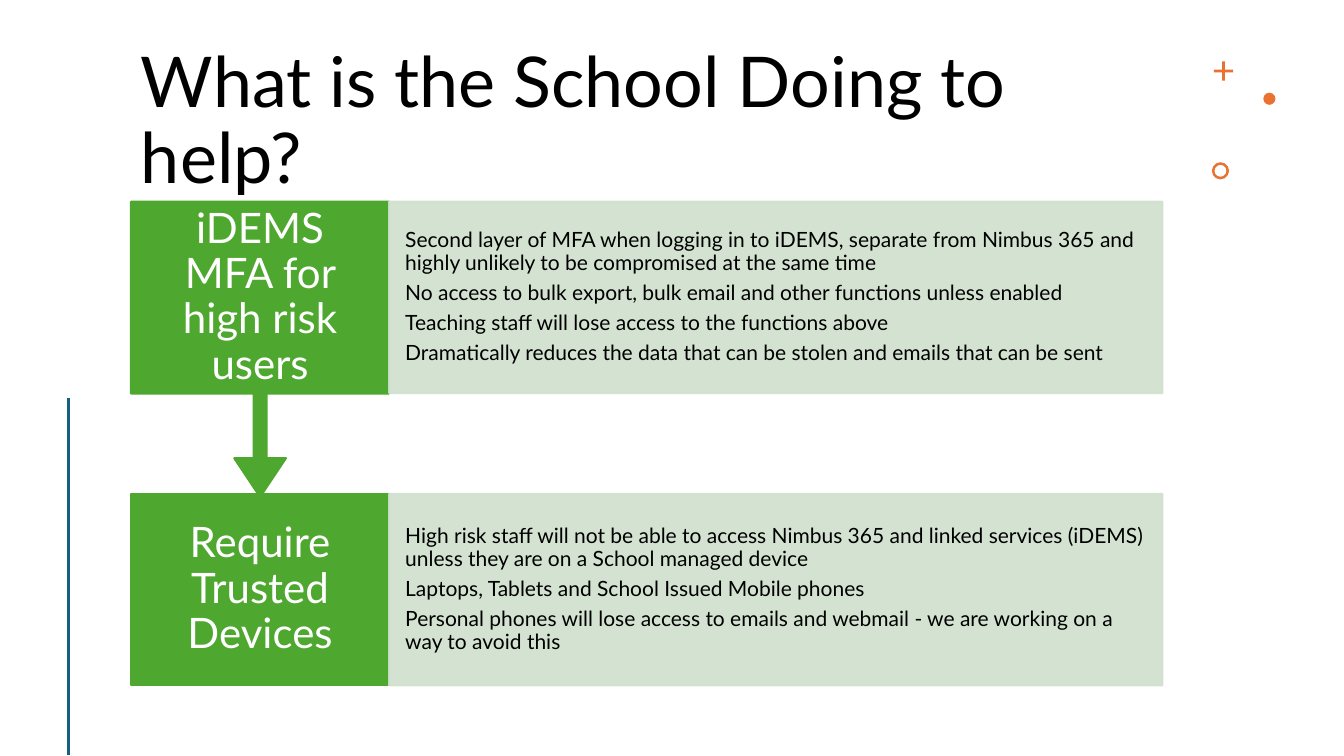
"""Build the slide on the steps the school takes to protect its accounts."""
import dataclasses
import typing

import pptx
import pptx.dml.color
import pptx.enum.shapes
import pptx.enum.text
import pptx.oxml.ns
import pptx.oxml.xmlchemy
import pptx.util

Inches = pptx.util.Inches
Pt = pptx.util.Pt
SHAPE = pptx.enum.shapes.MSO_SHAPE
ALIGN = pptx.enum.text.PP_ALIGN
ANCHOR = pptx.enum.text.MSO_ANCHOR

COLORS = {
    "text": "000000",
    "label": "FFFFFF",
    "step": "4EA72E",
    "detail": "D0E1CD",
    "ornament": "E97132",
    "rule": "156082",
}
FONT = "Lato"
LEFT, LABEL_W, DETAIL_W, ROW_H = 1.3, 2.56, 7.67, 1.9
CALLOUT_H = 2.93


@dataclasses.dataclass(frozen=True)
class Box:
    kind: typing.Any
    left: float
    top: float
    width: float
    height: float
    color: str
    adjustments: tuple[float, ...] = ()


@dataclasses.dataclass(frozen=True)
class TextStyle:
    size: float
    color: str
    align: typing.Any = ALIGN.LEFT
    space_after: float = 0
    frame: dict[str, typing.Any] = dataclasses.field(default_factory=dict)


@dataclasses.dataclass(frozen=True)
class Step:
    top: float
    label: str
    details: tuple[str, ...]
    has_arrow: bool = False


def frame_format(anchor: typing.Any, x: float, y: float) -> dict[str, typing.Any]:
    return {
        "word_wrap": True,
        "vertical_anchor": anchor,
        "margin_left": Inches(x),
        "margin_right": Inches(x),
        "margin_top": Inches(y),
        "margin_bottom": Inches(y),
    }


TITLE_STYLE = TextStyle(50, "text", frame=frame_format(ANCHOR.TOP, 0.1, 0.05))
LABEL_STYLE = TextStyle(30, "label", ALIGN.CENTER, 10.5, frame_format(ANCHOR.MIDDLE, 0.18, 0.23))
DETAIL_STYLE = TextStyle(15, "text", ALIGN.LEFT, 5.25, frame_format(ANCHOR.MIDDLE, 0.16, 0.21))

ORNAMENTS = (
    Box(SHAPE.CROSS, 12.04, 0.61, 0.19, 0.19, "ornament", (0.43,)),
    Box(SHAPE.OVAL, 12.53, 0.92, 0.12, 0.12, "ornament"),
    Box(SHAPE.DONUT, 12.02, 1.61, 0.17, 0.17, "ornament", (0.15,)),
)

STEPS = (
    Step(4.9, "Require Trusted Devices", (
        "High risk staff will not be able to access Nimbus 365 and linked services (iDEMS) "
        "unless they are on a School managed device",
        "Laptops, Tablets and School Issued Mobile phones",
        "Personal phones will lose access to emails and webmail - we are working on a way to avoid this",
    )),
    Step(2, "iDEMS MFA for high risk users", (
        "Second layer of MFA when logging in to iDEMS, separate from Nimbus 365 and "
        "highly unlikely to be compromised at the same time",
        "No access to bulk export, bulk email and other functions unless enabled",
        "Teaching staff will lose access to the functions above",
        "Dramatically reduces the data that can be stolen and emails that can be sent",
    ), True),
)


def rgb(name: str) -> pptx.dml.color.RGBColor:
    return pptx.dml.color.RGBColor.from_string(COLORS[name])


def apply_format(target: typing.Any, values: dict[str, typing.Any]) -> None:
    for name, value in values.items():
        setattr(target, name, value)


def write_text(sp: typing.Any, lines: tuple[str, ...], style: TextStyle) -> None:
    tf = sp.text_frame
    apply_format(tf, style.frame)
    for i, line in enumerate(lines):
        p = tf.paragraphs[0] if i == 0 else tf.add_paragraph()
        apply_format(p, {
            "alignment": style.align,
            "line_spacing": 0.9,
            "space_after": Pt(style.space_after),
        })
        r = p.add_run()
        apply_format(r, {"text": line})
        apply_format(r.font, {"name": FONT, "size": Pt(style.size)})
        r.font.color.rgb = rgb(style.color)


def draw_box(s: typing.Any, box: Box, line_width: float = 0) -> typing.Any:
    sp = s.shapes.add_shape(
        box.kind, Inches(box.left), Inches(box.top), Inches(box.width), Inches(box.height))
    sp.shadow.inherit = False
    for i, value in enumerate(box.adjustments):
        sp.adjustments[i] = value
    sp.fill.solid()
    sp.fill.fore_color.rgb = rgb(box.color)
    if line_width:
        sp.line.color.rgb = rgb(box.color)
        sp.line.width = Pt(line_width)
    else:
        sp.line.fill.background()
    return sp


def set_opacity(sp: typing.Any, percent: int) -> None:
    for color in sp.element.spPr.iter(pptx.oxml.ns.qn("a:srgbClr")):
        alpha = pptx.oxml.xmlchemy.OxmlElement("a:alpha")
        alpha.set("val", str(percent * 1000))
        color.append(alpha)


def draw_step(s: typing.Any, step: Step) -> None:
    if step.has_arrow:
        label = Box(SHAPE.DOWN_ARROW_CALLOUT, LEFT, step.top, LABEL_W, CALLOUT_H,
                    "step", (0.05, 0.1, 0.15, 0.65))
    else:
        label = Box(SHAPE.RECTANGLE, LEFT, step.top, LABEL_W, ROW_H, "step")
    write_text(draw_box(s, label, 1.5), (step.label,), LABEL_STYLE)
    detail = Box(SHAPE.RECTANGLE, LEFT + LABEL_W, step.top, DETAIL_W, ROW_H, "detail")
    sp = draw_box(s, detail, 1.5)
    set_opacity(sp, 90)
    write_text(sp, step.details, DETAIL_STYLE)


def draw_rule(s: typing.Any) -> None:
    sp = s.shapes.add_connector(
        pptx.enum.shapes.MSO_CONNECTOR.STRAIGHT,
        Inches(0.68), Inches(3.95), Inches(0.68), Inches(7.49))
    sp.line.color.rgb = rgb("rule")
    sp.line.width = Pt(2)
    sp.element.spPr.append(pptx.oxml.xmlchemy.OxmlElement("a:effectLst"))


def main() -> None:
    prs = pptx.Presentation()
    apply_format(prs, {"slide_width": Inches(13.33), "slide_height": Inches(7.5)})
    s = prs.slides.add_slide(prs.slide_layouts[6])
    title = s.shapes.add_textbox(Inches(LEFT), Inches(0.42), Inches(10.23), Inches(1.31))
    write_text(title, ("What is the School Doing to help?",), TITLE_STYLE)
    for ornament in ORNAMENTS:
        draw_box(s, ornament)
    draw_rule(s)
    for step in STEPS:
        draw_step(s, step)
    prs.save("out.pptx")


if __name__ == "__main__":
    main()
